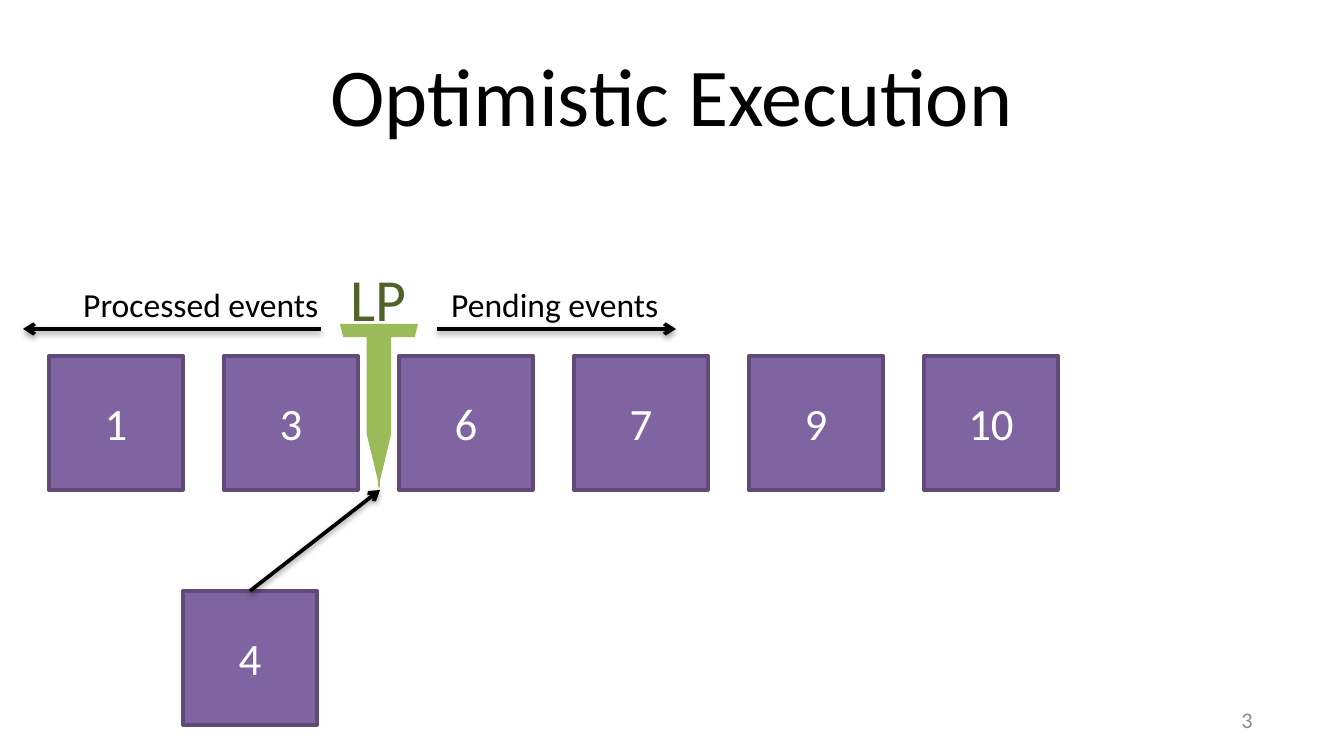
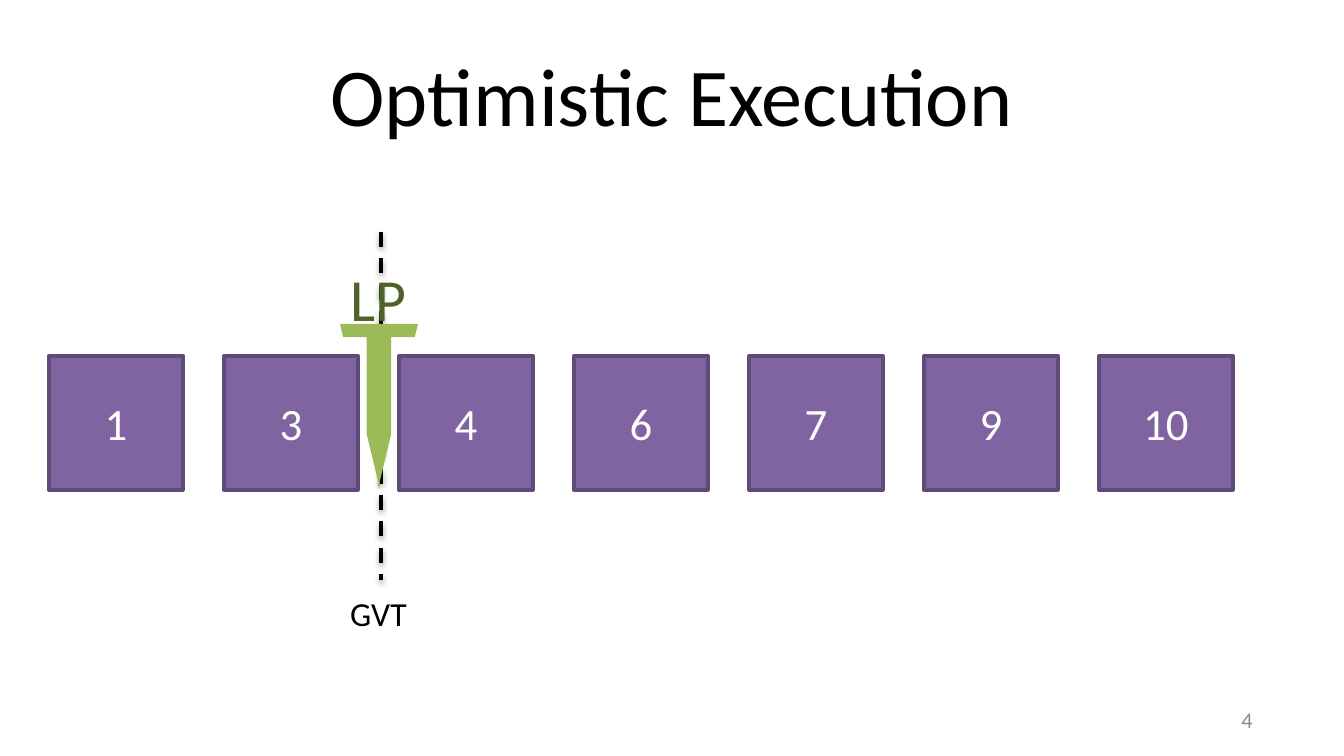
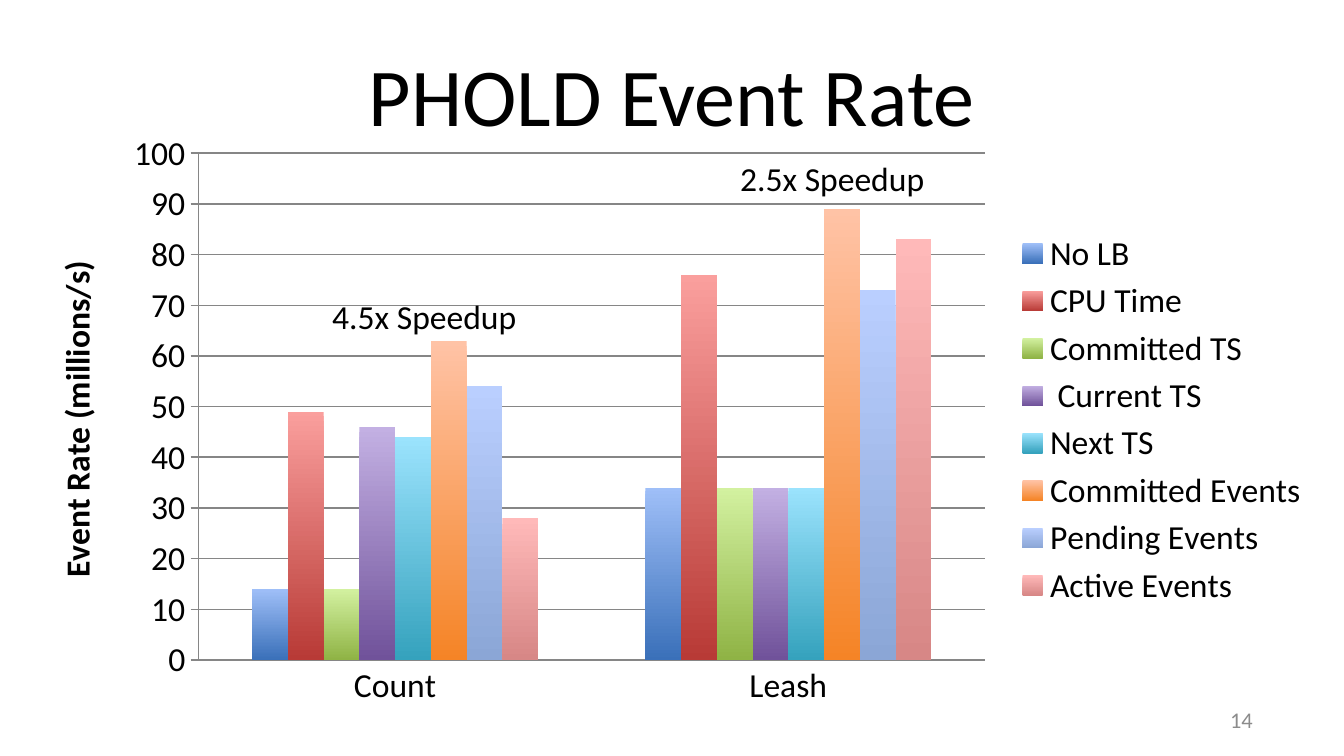
from lxml.etree import SubElement
from pptx import Presentation
from pptx.chart.data import CategoryChartData
from pptx.dml.color import RGBColor
from pptx.enum.chart import XL_CHART_TYPE, XL_LEGEND_POSITION, XL_TICK_MARK
from pptx.enum.dml import MSO_LINE
from pptx.enum.shapes import MSO_CONNECTOR, MSO_SHAPE
from pptx.enum.text import MSO_ANCHOR, MSO_AUTO_SIZE, PP_ALIGN
from pptx.oxml import parse_xml
from pptx.oxml.ns import nsdecls, qn
from pptx.util import Emu, Pt

PX = 914400 / 134.4
FONT = "Calibri"
HEX = {"black": "000000", "white": "FFFFFF", "gray": "8C8C8C", "grid": "868686",
       "box": "8064A2", "edge": "5F4A78", "pin": "9BBB59", "lp": "4F6228"}
RGB = {name: RGBColor.from_string(code) for name, code in HEX.items()}
LEFT, MID, RIGHT = PP_ALIGN.LEFT, PP_ALIGN.CENTER, PP_ALIGN.RIGHT
SHADOW = (f'<a:effectLst {nsdecls("a")}><a:outerShdw blurRad="40000" dist="20000" '
          'dir="5400000" rotWithShape="0"><a:srgbClr val="000000">'
          '<a:alpha val="38000"/></a:srgbClr></a:outerShdw></a:effectLst>')


def add(shapes, spot, text, size, color="black", align=LEFT, fill=None, fit=True):
    """Add a text box, or a bordered square when a fill is given."""
    place = [Emu(round(n * PX)) for n in spot]
    if fill:
        shape = shapes.add_shape(MSO_SHAPE.RECTANGLE, *place)
        shape.shadow.inherit = False
        shape.fill.solid()
        shape.fill.fore_color.rgb = RGB[fill]
        shape.line.color.rgb = RGB["edge"]
        shape.line.width = Pt(2)
    else:
        shape = shapes.add_textbox(*place)
    frame = shape.text_frame
    frame.word_wrap = not fit
    frame.auto_size = MSO_AUTO_SIZE.SHAPE_TO_FIT_TEXT if fit else MSO_AUTO_SIZE.NONE
    frame.vertical_anchor = MSO_ANCHOR.TOP if fit else MSO_ANCHOR.MIDDLE
    para = frame.paragraphs[0]
    para.alignment = align
    run = para.add_run()
    run.text = text
    run.font.name = FONT
    run.font.size = Pt(size)
    run.font.color.rgb = RGB[color]
    return shape


def draw(shapes, ends, dash=False):
    """Add a shadowed line: dashed, or with an arrow at its end."""
    line = shapes.add_connector(MSO_CONNECTOR.STRAIGHT,
                                *[Emu(round(n * PX)) for n in ends])
    line.line.color.rgb = RGB["black"]
    line.line.width = Pt(2)
    if dash:
        line.line.dash_style = MSO_LINE.DASH
    else:
        SubElement(line.line._get_or_add_ln(), qn("a:tailEnd"), type="arrow")
    line._element.spPr.append(parse_xml(SHADOW))
    return line


deck = Presentation()
deck.slide_width, deck.slide_height = Emu(round(1344 * PX)), Emu(round(756 * PX))

# Titles and page numbers
pages = []
for title, number in [("Optimistic Execution", "3"), ("Optimistic Execution", "4"),
                      ("PHOLD Event Rate", "14")]:
    shapes = deck.slides.add_slide(deck.slide_layouts[6]).shapes
    add(shapes, (67, 31, 1210, 126), title, 44, align=MID, fit=False)
    add(shapes, (964, 700, 302, 40), number, 12, "gray", RIGHT, fit=False)
    pages.append(shapes)
first, second, rates = pages

# Event queues
SIDE, STEP = 134, 175
for shapes, events in [(first, [1, 3, 6, 7, 9, 10]), (second, [1, 3, 4, 6, 7, 9, 10])]:
    for i, event in enumerate(events):
        add(shapes, (49 + i * STEP, 356, SIDE, SIDE), str(event), 24, "white", MID,
            "box", fit=False)

# Late event joins the first queue
add(first, (438, 277, 238, 54), "Pending events", 18)
add(first, (70, 277, 266, 54), "Processed events", 18)
draw(first, (437, 329, 676, 329))
draw(first, (321, 329, 23, 329))
late = add(first, (183, 591, SIDE, SIDE), "4", 24, "white", MID, "box", fit=False)
draw(first, (250, 591, 380, 490)).begin_connect(late, 0)

# Global virtual time on the second queue
draw(second, (381, 232, 381, 580), dash=True)
add(second, (337, 586, 86, 54), "GVT", 18)

# LP pin, made of two mirrored halves
for shapes in (first, second):
    pin = shapes.add_group_shape().shapes
    for x, flip in [(378, False), (340, True)]:
        half = pin.add_shape(MSO_SHAPE.HALF_FRAME,
                             *[Emu(round(n * PX)) for n in (x, 324, 40, 165)])
        half.shadow.inherit = False
        half.fill.solid()
        half.fill.fore_color.rgb = RGB["pin"]
        half.line.fill.background()
        if flip:
            half._element.spPr.xfrm.set("flipH", "1")
    add(pin, (337, 255, 83, 86), "LP", 32, "lp", MID)

# Event rate chart: name, values, top and bottom colour
SERIES = [
    ("No LB", (14, 34), "9FBFF8", "3A70B9"),
    ("CPU Time", (49, 76), "FA9F9D", "B83A36"),
    ("Committed TS", (14, 34), "D3F1A0", "8FB345"),
    (" Current TS", (46, 34), "C3B0E3", "70529A"),
    ("Next TS", (44, 34), "9BE3FD", "35A2BD"),
    ("Committed Events", (63, 89), "FFC3A6", "F58426"),
    ("Pending Events", (54, 73), "BACFFF", "8BA6D6"),
    ("Active Events", (28, 83), "FFB9B9", "D78786"),
]
data = CategoryChartData()
data.categories = ["Count", "Leash"]
for name, values, _, _ in SERIES:
    data.add_series(name, values)
chart = rates.add_chart(XL_CHART_TYPE.COLUMN_CLUSTERED,
                        *[Emu(round(n * PX)) for n in (23, 121, 1300, 597)], data).chart
chart.font.name = FONT
chart.font.size = Pt(18)
chart.font.color.rgb = RGB["black"]
chart.has_title = False
chart.has_legend = True
chart.legend.position = XL_LEGEND_POSITION.RIGHT
chart.legend.include_in_layout = False

plot = chart.plots[0]
plot.gap_width, plot.overlap = 300, 0
plot.vary_by_categories = False
for series, (_, _, top, base) in zip(plot.series, SERIES):
    fill = series.format.fill
    fill.gradient()
    fill.gradient_angle = 270
    for stop, code in zip(fill.gradient_stops, (top, base)):
        stop.color.rgb = RGBColor.from_string(code)

cats, vals = chart.category_axis, chart.value_axis
cats.major_tick_mark = XL_TICK_MARK.NONE
vals.major_tick_mark = XL_TICK_MARK.OUTSIDE
vals.minimum_scale, vals.maximum_scale, vals.major_unit = 0, 100, 10
vals.has_major_gridlines = True
for part in (cats, vals, vals.major_gridlines):
    part.format.line.color.rgb = RGB["grid"]
    part.format.line.width = Pt(0.75)
run = vals.axis_title.text_frame.paragraphs[0].add_run()
run.text = "Event Rate (millions/s)"
run.font.name = FONT
run.font.size = Pt(18)
run.font.bold = True
run.font.color.rgb = RGB["black"]

area = chart._chartSpace.chart.plotArea
for old in area.findall(qn("c:layout")):
    area.remove(old)
area.insert(0, parse_xml(
    f'<c:layout {nsdecls("c")}><c:manualLayout><c:layoutTarget val="inner"/>'
    '<c:xMode val="edge"/><c:yMode val="edge"/><c:x val="0.135"/><c:y val="0.054"/>'
    '<c:w val="0.605"/><c:h val="0.849"/></c:manualLayout></c:layout>'))

add(rates, (319, 289, 214, 54), "4.5x Speedup", 18)
add(rates, (727, 151, 214, 54), "2.5x Speedup", 18)

deck.save("out.pptx")
